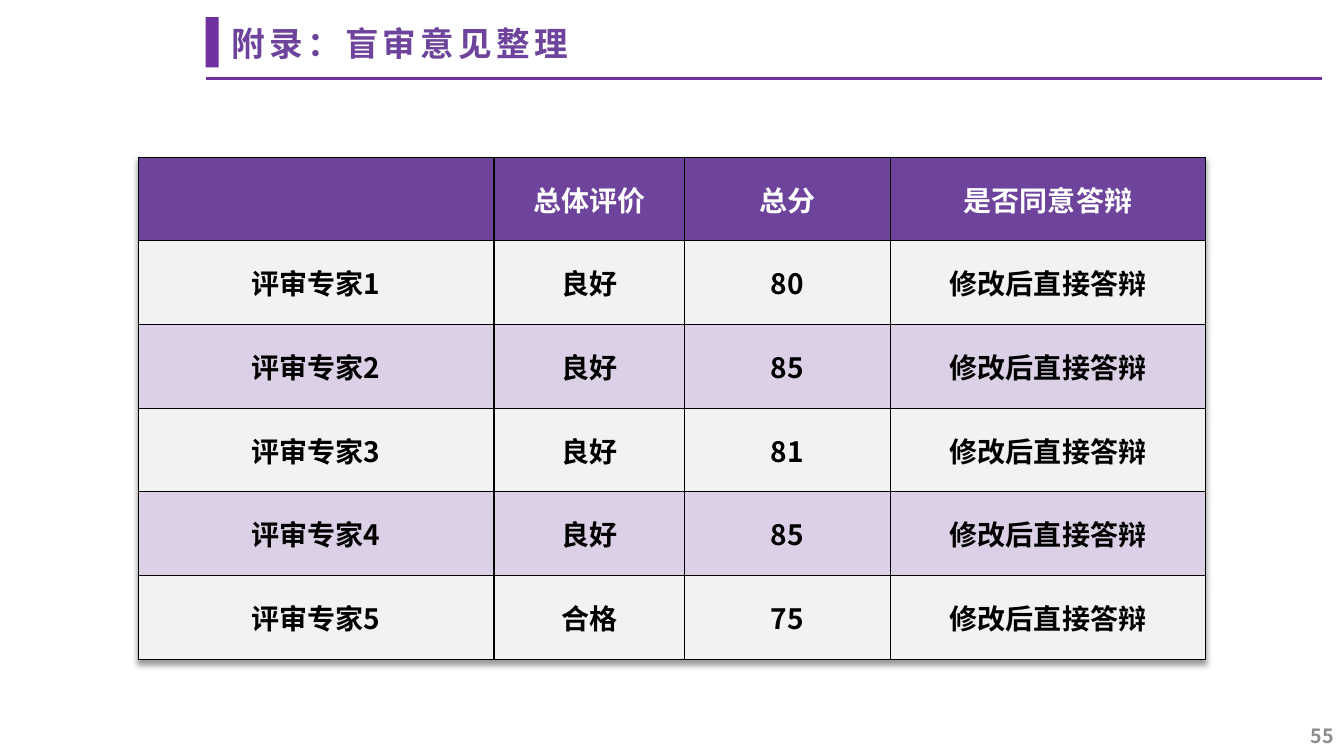
from dataclasses import dataclass

from lxml import etree
from pptx import Presentation
from pptx import util as u
from pptx.dml.color import RGBColor
from pptx.enum import shapes, text
from pptx.oxml import ns


@dataclass(frozen=True)
class Theme:
    """Colours, type sizes and font of the slide."""
    font: str = "Noto Sans CJK SC"
    accent: str = "7030A0"
    header: str = "6D439B"
    light: str = "F2F2F2"
    band: str = "DBD0E6"
    white: str = "FFFFFF"
    black: str = "000000"
    grey: str = "8C8C8C"
    title_size: int = 24
    cell_size: int = 20
    page_size: int = 14


THEME = Theme()
COLUMN_WIDTHS = (3.53, 1.89, 2.04, 3.13)
ROW_HEIGHT = 0.83
HEADERS = ("", "总体评价", "总分", "是否同意答辩")
REVIEWS = (("良好", 80), ("良好", 85), ("良好", 81), ("良好", 85), ("合格", 75))
DECISION = "修改后直接答辩"


def rgb(color):
    """Turn a hex string into a colour."""
    return RGBColor.from_string(color)


def sub(parent, tag, **attrs):
    """Append a DrawingML element with attributes."""
    return etree.SubElement(parent, ns.qn(f"a:{tag}"), attrs)


def write_text(tf, content, *, size, color, align=text.PP_ALIGN.LEFT,
               line_spacing=None, tracking=None):
    """Write one bold formatted paragraph into a text frame."""
    p = tf.paragraphs[0]
    p.alignment = align
    if line_spacing:
        p.line_spacing = line_spacing
    r = p.add_run()
    r.text = content
    r.font.size = u.Pt(size)
    r.font.bold = True
    r.font.color.rgb = rgb(color)
    r.font.name = THEME.font
    props = r.font._element
    sub(props, "ea", typeface=THEME.font)
    if tracking:
        props.set("spc", str(tracking * 100))


def add_text(s, box, content, **fmt):
    """Add a wrapped, vertically centred text box."""
    tf = s.shapes.add_textbox(*map(u.Inches, box)).text_frame
    tf.word_wrap = True
    tf.vertical_anchor = text.MSO_ANCHOR.MIDDLE
    write_text(tf, content, **fmt)


def add_bar(s, box, color):
    """Add a plain filled rectangle."""
    sp = s.shapes.add_shape(shapes.MSO_SHAPE.RECTANGLE, *map(u.Inches, box))
    sp.shadow.inherit = False
    sp.fill.solid()
    sp.fill.fore_color.rgb = rgb(color)
    sp.line.fill.background()


def add_rule(s, ends, color, width):
    """Add a straight line without shadow."""
    line = s.shapes.add_connector(shapes.MSO_CONNECTOR.STRAIGHT, *map(u.Inches, ends))
    line.line.color.rgb = rgb(color)
    line.line.width = u.Pt(width)
    sub(line._element.spPr, "effectLst")


def format_cell(cell, content, fill, color):
    """Fill, border and label one table cell."""
    props = cell._tc.get_or_add_tcPr()
    for side in ("lnL", "lnR", "lnT", "lnB"):
        edge = sub(props, side, w=str(u.Pt(1)))
        sub(sub(edge, "solidFill"), "srgbClr", val=THEME.black)
    cell.fill.solid()
    cell.fill.fore_color.rgb = rgb(fill)
    cell.vertical_anchor = text.MSO_ANCHOR.MIDDLE
    if content:
        write_text(cell.text_frame, content, size=THEME.cell_size, color=color,
                   align=text.PP_ALIGN.CENTER)


def add_table_shadow(table):
    """Give the table a soft shadow below it."""
    props = table._tbl.tblPr
    effects = sub(props, "effectLst")
    props.insert(0, effects)
    shadow = sub(effects, "outerShdw", blurRad=str(u.Pt(4)), dist=str(u.Pt(3)),
                 dir="5400000", algn="t", rotWithShape="0")
    sub(sub(shadow, "srgbClr", val=THEME.black), "alpha", val="40000")


def add_review_table(s, left, top):
    """Add the table of reviewers' verdicts."""
    rows = [HEADERS] + [(f"评审专家{n}", rating, str(score), DECISION)
                        for n, (rating, score) in enumerate(REVIEWS, 1)]
    size = (sum(COLUMN_WIDTHS), ROW_HEIGHT * len(rows))
    table = s.shapes.add_table(len(rows), len(HEADERS),
                               *map(u.Inches, (left, top, *size))).table
    table.first_row = table.horz_banding = False
    add_table_shadow(table)
    for column, width in zip(table.columns, COLUMN_WIDTHS):
        column.width = u.Inches(width)
    for i, row in enumerate(rows):
        table.rows[i].height = u.Inches(ROW_HEIGHT)
        fill = THEME.light if i % 2 else THEME.band
        color = THEME.black
        if i == 0:
            fill, color = THEME.header, THEME.white
        for j, content in enumerate(row):
            format_cell(table.cell(i, j), content, fill, color)


def main():
    """Build the slide and save it."""
    prs = Presentation()
    prs.slide_width, prs.slide_height = u.Inches(13.33), u.Inches(7.5)
    s = prs.slides.add_slide(prs.slide_layouts[6])
    add_rule(s, (2.04, 0.78, 13.11, 0.78), THEME.accent, 2.25)
    add_bar(s, (2.04, 0.17, 0.13, 0.5), THEME.accent)
    add_text(s, (10.33, 7.1, 3, 0.4), "55", size=THEME.page_size,
             color=THEME.grey, align=text.PP_ALIGN.RIGHT)
    add_text(s, (2.2, 0.21, 11.03, 0.49), "附录：盲审意见整理", size=THEME.title_size,
             color=THEME.header, line_spacing=0.9, tracking=3)
    add_review_table(s, 1.37, 1.56)
    prs.save("out.pptx")


if __name__ == "__main__":
    main()
